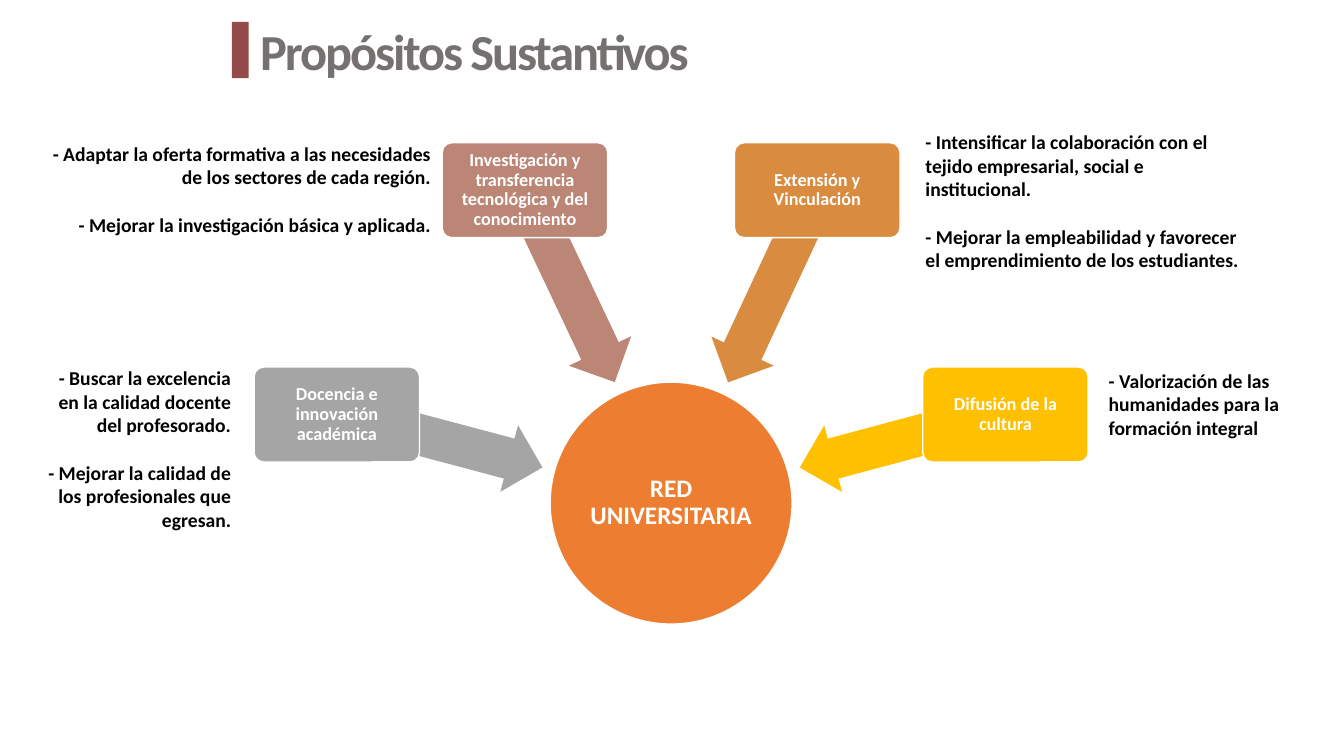
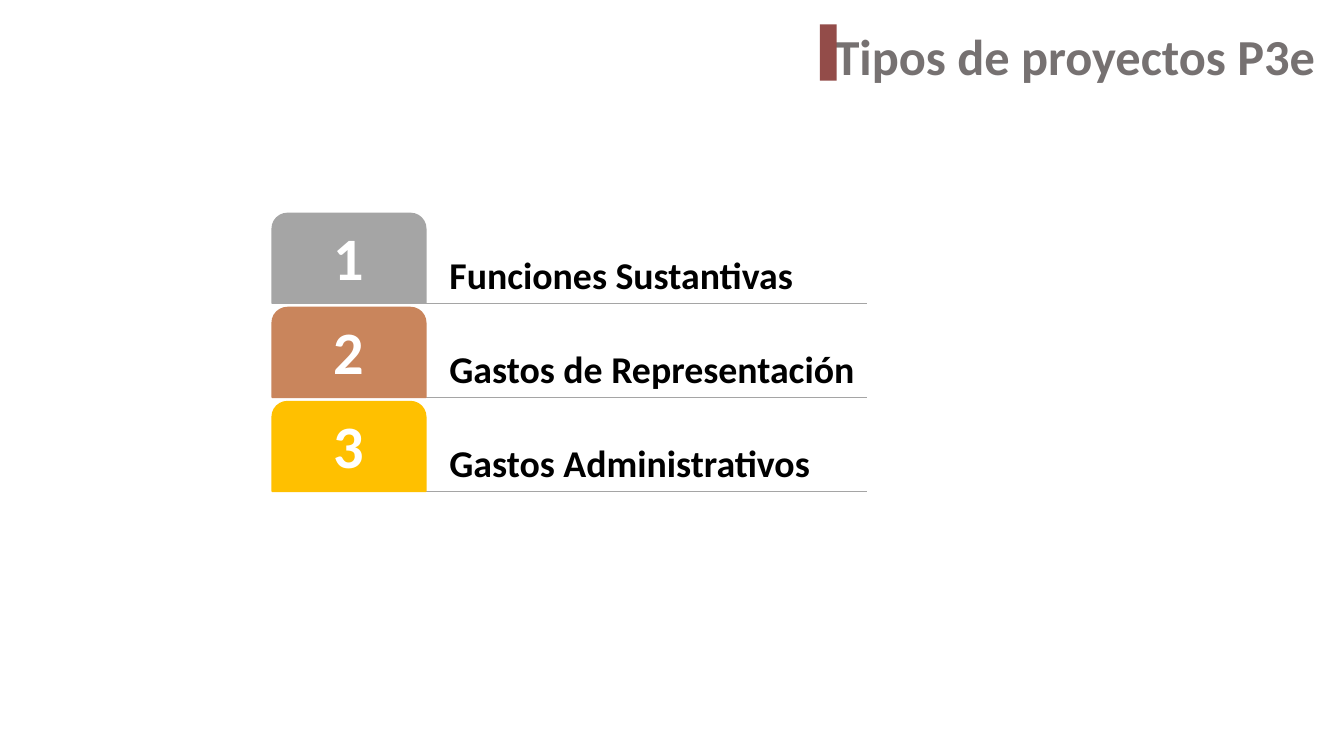
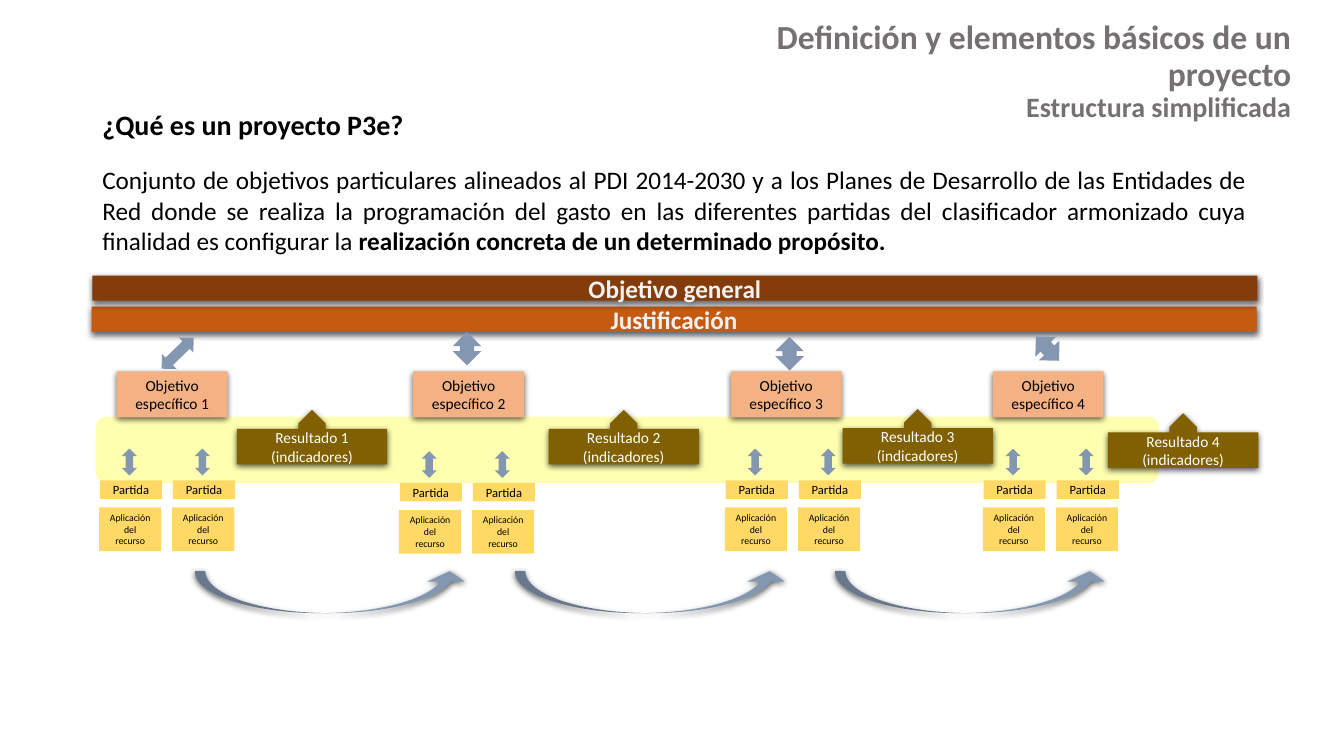
"""Build three slides on the university network's purposes and P3e projects."""
from dataclasses import dataclass
from typing import NamedTuple

from lxml.etree import SubElement
from pptx import Presentation
from pptx.dml.color import RGBColor
from pptx.enum.shapes import MSO_CONNECTOR, MSO_SHAPE
from pptx.enum.text import MSO_ANCHOR, PP_ALIGN
from pptx.oxml.ns import qn
from pptx.util import Emu, Inches, Pt


@dataclass(frozen=True)
class Theme:
    font: str = "Calibri"
    black: str = "000000"
    white: str = "FFFFFF"
    title: str = "767171"
    marker: str = "934C49"
    orange: str = "ED7D31"
    gray: str = "A5A5A5"
    rose: str = "BB8676"
    amber: str = "D98B3F"
    gold: str = "FFC000"
    copper: str = "C9855C"
    yellow: str = "FFFF00"
    brown: str = "843C0B"
    rust: str = "C55A11"
    off_white: str = "F2F2F2"
    peach: str = "F4B183"
    steel: str = "8497B0"
    olive: str = "806000"
    sand: str = "FFD966"
    title_size: int = 36
    number_size: int = 43
    label_size: int = 27
    heading_size: int = 24
    subheading_size: int = 20
    body_size: int = 18
    note_size: int = 14
    function_size: int = 13
    node_size: int = 11
    item_size: int = 9
    detail_size: int = 7


class Line(NamedTuple):
    text: str
    size: int
    bold: bool = False
    strong_end: str = ""


class Deck:
    columns = 160
    rows = 90

    def __init__(self, theme):
        self.theme = theme
        self.deck = Presentation()
        self.deck.slide_width = Emu(Inches(40) // 3)
        self.deck.slide_height = Inches(7.5)
        self.page = None

    def add_page(self):
        self.page = self.deck.slides.add_slide(self.deck.slide_layouts[6])

    def across(self, count):
        return Emu(round(self.deck.slide_width * count / self.columns))

    def down(self, count):
        return Emu(round(self.deck.slide_height * count / self.rows))

    def place(self, at):
        left, top, width, height = at
        return self.across(left), self.down(top), self.across(width), self.down(height)

    def shape(self, kind, at, fill, outline=None, turn=0, adjust=(), opacity=None, shadow=False):
        shape = self.page.shapes.add_shape(kind, *self.place(at))
        shape.rotation = turn
        for index, value in enumerate(adjust):
            shape.adjustments[index] = value
        shape.fill.solid()
        shape.fill.fore_color.rgb = RGBColor.from_string(fill)
        if outline:
            shape.line.color.rgb = RGBColor.from_string(outline)
            shape.line.width = Pt(1)
        else:
            shape.line.fill.background()
        shape.shadow.inherit = False
        properties = shape._element.spPr
        if opacity:
            color = properties.find(qn("a:solidFill"))[0]
            SubElement(color, qn("a:alpha"), val=str(opacity * 1000))
        if shadow:
            effects = properties.find(qn("a:effectLst"))
            outer = SubElement(effects, qn("a:outerShdw"), blurRad=str(Pt(4.5)),
                               dist=str(Pt(1.5)), dir="5400000", algn="ctr", rotWithShape="0")
            color = SubElement(outer, qn("a:srgbClr"), val=self.theme.black)
            SubElement(color, qn("a:alpha"), val="63000")
        return shape

    def set_text(self, box, lines, color, align=PP_ALIGN.CENTER, anchor=MSO_ANCHOR.MIDDLE,
                 leading=None, gap=0, insets=(1.2, 0.6, 1.2, 0.6), tracking=None):
        frame = box.text_frame
        frame.word_wrap = True
        frame.vertical_anchor = anchor
        left, top, right, bottom = insets
        frame.margin_left, frame.margin_right = self.across(left), self.across(right)
        frame.margin_top, frame.margin_bottom = self.down(top), self.down(bottom)
        for index, line in enumerate(lines):
            para = frame.add_paragraph() if index else frame.paragraphs[0]
            para.alignment = align
            if leading:
                para.line_spacing = leading
            if index and gap:
                para.space_before = Pt(gap)
            para.font.name = self.theme.font
            para.font.size = Pt(line.size)
            para.font.bold = line.bold
            para.font.color.rgb = RGBColor.from_string(color)
            span = para.add_run()
            span.text = line.text
            if tracking:
                span._r.get_or_add_rPr().set("spc", str(tracking))
            if line.strong_end:
                span = para.add_run()
                span.text = line.strong_end
                span.font.bold = True

    def text(self, at, lines, color, **style):
        self.set_text(self.page.shapes.add_textbox(*self.place(at)), lines, color, **style)

    def title(self, at, lines, align, **style):
        self.text(at, lines, self.theme.title, align=align, **style)

    def marker(self, left, top):
        self.shape(MSO_SHAPE.RECTANGLE, (left, top, 2, 6.7), self.theme.marker)

    def note(self, at, texts, align):
        lines = [Line(text, self.theme.note_size, True) for text in texts]
        self.text(at, lines, self.theme.black, align=align, anchor=MSO_ANCHOR.TOP, gap=17)

    def rule(self, left, right, top):
        rule = self.page.shapes.add_connector(
            MSO_CONNECTOR.STRAIGHT, self.across(left), self.down(top),
            self.across(right), self.down(top))
        rule.line.color.rgb = RGBColor.from_string(self.theme.gray)
        rule.line.width = Pt(1)
        SubElement(rule._element.spPr, qn("a:effectLst"))

    def block(self, at, texts, size, fill, color, kind=MSO_SHAPE.RECTANGLE,
              bold=False, shadow=False, adjust=()):
        box = self.shape(kind, at, fill, shadow=shadow, adjust=adjust)
        self.set_text(box, [Line(text, size, bold) for text in texts], color)

    def double_arrow(self, at, turn=0):
        self.shape(MSO_SHAPE.UP_DOWN_ARROW, at, self.theme.steel, turn=turn)


def add_purposes(deck):
    theme = deck.theme
    deck.add_page()
    deck.title((29.8, 0, 117.4, 11.9), [Line("Propósitos Sustantivos", theme.title_size, True)],
               PP_ALIGN.LEFT, tracking=-150)
    deck.marker(27.6, 2.6)

    axis = 79.9
    circle = deck.shape(MSO_SHAPE.OVAL, (axis - 14.4, 45.5, 28.8, 28.8), theme.orange, theme.white)
    deck.set_text(circle, [Line("RED UNIVERSITARIA", theme.body_size, True)], theme.white,
                  leading=0.9, insets=(0.1,) * 4)

    outer, inner = (39.8, 43.7, 27.5, 52.4), (17.4, 17, 12.1, 34.1)
    functions = (
        ("Docencia e innovación académica", theme.gray, -1, outer, 194.9),
        ("Investigación y transferencia tecnológica y del conocimiento", theme.rose, -1, inner, 244.7),
        ("Extensión y Vinculación", theme.amber, 1, inner, 295),
        ("Difusión de la cultura", theme.gold, 1, outer, 345),
    )
    for name, fill, side, (box_offset, box_top, arrow_offset, arrow_middle), turn in functions:
        deck.shape(MSO_SHAPE.LEFT_ARROW,
                   (axis + side * arrow_offset - 12.6, arrow_middle - 4.1, 25.2, 8.2),
                   fill, turn=turn, adjust=(0.6, 0.5))
        box = deck.shape(MSO_SHAPE.ROUNDED_RECTANGLE,
                         (axis + side * box_offset - 9.85, box_top, 19.7, 11.3),
                         fill, theme.white, adjust=(0.1,))
        deck.set_text(box, [Line(name, theme.function_size, True)], theme.white,
                      leading=0.9, insets=(0.4,) * 4)

    deck.note((3, 43, 25.7, 21),
              ("- Buscar la excelencia en la calidad docente del profesorado.",
               "- Mejorar la calidad de los profesionales que egresan."), PP_ALIGN.RIGHT)
    deck.note((4.4, 16.3, 48.1, 15.4),
              ("- Adaptar la oferta formativa a las necesidades de los sectores de cada región.",
               "- Mejorar la investigación básica y aplicada."), PP_ALIGN.RIGHT)
    deck.note((109, 14.9, 41.3, 18.1),
              ("- Intensificar la colaboración con el tejido empresarial, social e institucional.",
               "- Mejorar la empleabilidad y favorecer el emprendimiento de los estudiantes."),
              PP_ALIGN.LEFT)
    deck.note((130.8, 43.3, 24.7, 9.7),
              ("- Valorización de las humanidades para la formación integral",), PP_ALIGN.LEFT)


def add_project_types(deck):
    theme = deck.theme
    deck.add_page()
    deck.title((67.8, 2.9, 90, 7.4), [Line("Tipos de proyectos P3e", theme.title_size, True)],
               PP_ALIGN.RIGHT, insets=(0.5, 0, 1.2, 0))

    left, tab_width, right, height = 32.4, 18.3, 103.2, 10.7
    kinds = (("Funciones Sustantivas", theme.gray),
             ("Gastos de Representación", theme.copper),
             ("Gastos Administrativos", theme.gold))
    for index, (name, fill) in enumerate(kinds):
        top = 25.4 + index * 11.2
        deck.rule(left, right, top + height)
        deck.text((left + tab_width, top, right - left - tab_width, height),
                  [Line(name, theme.label_size, True)], theme.black, align=PP_ALIGN.LEFT,
                  anchor=MSO_ANCHOR.BOTTOM, leading=0.9, insets=(2.8, 0.7, 0.7, 0.7))
        tab = deck.shape(MSO_SHAPE.ROUND_2_SAME_RECTANGLE, (left, top, tab_width, height),
                         fill, fill, adjust=(0.17, 0))
        deck.set_text(tab, [Line(str(index + 1), theme.number_size, True)], theme.white,
                      leading=0.9, insets=(1.1,) * 4)
    deck.marker(97.6, 2.9)


def add_project_structure(deck):
    theme = deck.theme
    deck.add_page()
    deck.shape(MSO_SHAPE.ROUNDED_RECTANGLE, (11.4, 49.6, 126.6, 7.9), theme.yellow, opacity=31)
    deck.title((77.9, 1.9, 77, 14),
               [Line("Definición y elementos básicos de un proyecto", theme.heading_size, True),
                Line("Estructura simplificada", theme.subheading_size, True)],
               PP_ALIGN.RIGHT, anchor=MSO_ANCHOR.TOP, leading=0.9)
    deck.text((11, 12.1, 138.6, 19),
              [Line("¿Qué es un proyecto P3e?", theme.subheading_size, True),
               Line("Conjunto de objetivos particulares alineados al PDI 2014-2030 y a los Planes "
                    "de Desarrollo de las Entidades de Red donde se realiza la programación del "
                    "gasto en las diferentes partidas del clasificador armonizado cuya finalidad "
                    "es configurar la ", theme.body_size,
                    strong_end="realización concreta de un determinado propósito.")],
              theme.black, align=PP_ALIGN.JUSTIFY, gap=17)

    bars = (("Justificación", theme.rust, 10.9, 36.5),
            ("Objetivo general", theme.brown, 11, 32.8))
    for name, fill, left, top in bars:
        deck.block((left, top, 138.7, 3), [name], theme.body_size, fill, theme.off_white,
                   bold=True, shadow=True)

    links = (((19.9, 39.4, 2.5, 5.3), 45.8), ((53.9, 39.5, 3.4, 4), 0),
             ((92.3, 40.1, 3.4, 4), 0), ((123, 39.5, 3.4, 4), 316.3))
    for at, turn in links:
        deck.double_arrow(at, turn)

    branches = ((13.9, 28.2, 48.8, 11.9, 57.2), (49.2, 65.3, 48.8, 47.6, 57.5),
                (87, 100.3, 48.7, 86.4, 57.2), (118.2, 131.9, 49.2, 117.1, 57.2))
    for number, (goal, result, result_top, item, item_top) in enumerate(branches, 1):
        deck.block((goal, 44.2, 13.2, 5.5), [f"Objetivo específico {number}"], theme.node_size,
                   theme.peach, theme.black, shadow=True)
        deck.block((result, result_top, 17.9, 6.5), [f"Resultado {number}", "(indicadores)"],
                   theme.node_size, theme.olive, theme.white, kind=MSO_SHAPE.UP_ARROW_CALLOUT,
                   shadow=True, adjust=(0.5, 0.25, 0.25, 0.65))
        for left in (item, item + 8.7):
            deck.double_arrow((left + 2.6, item_top - 3.8, 1.8, 3.2))
            deck.block((left, item_top, 7.4, 2.2), ["Partida"], theme.item_size,
                       theme.sand, theme.black)
            deck.block((left - 0.1, item_top + 3.2, 7.4, 5.2), ["Aplicación del recurso"],
                       theme.detail_size, theme.sand, theme.black)

    for index in range(3):
        deck.shape(MSO_SHAPE.CURVED_UP_ARROW, (23.2 + index * 38.1, 68, 32.6, 5), theme.steel,
                   adjust=(0.25, 0.9, 0.25), shadow=True)


def main():
    deck = Deck(Theme())
    add_purposes(deck)
    add_project_types(deck)
    add_project_structure(deck)
    deck.deck.save("out.pptx")


if __name__ == "__main__":
    main()
